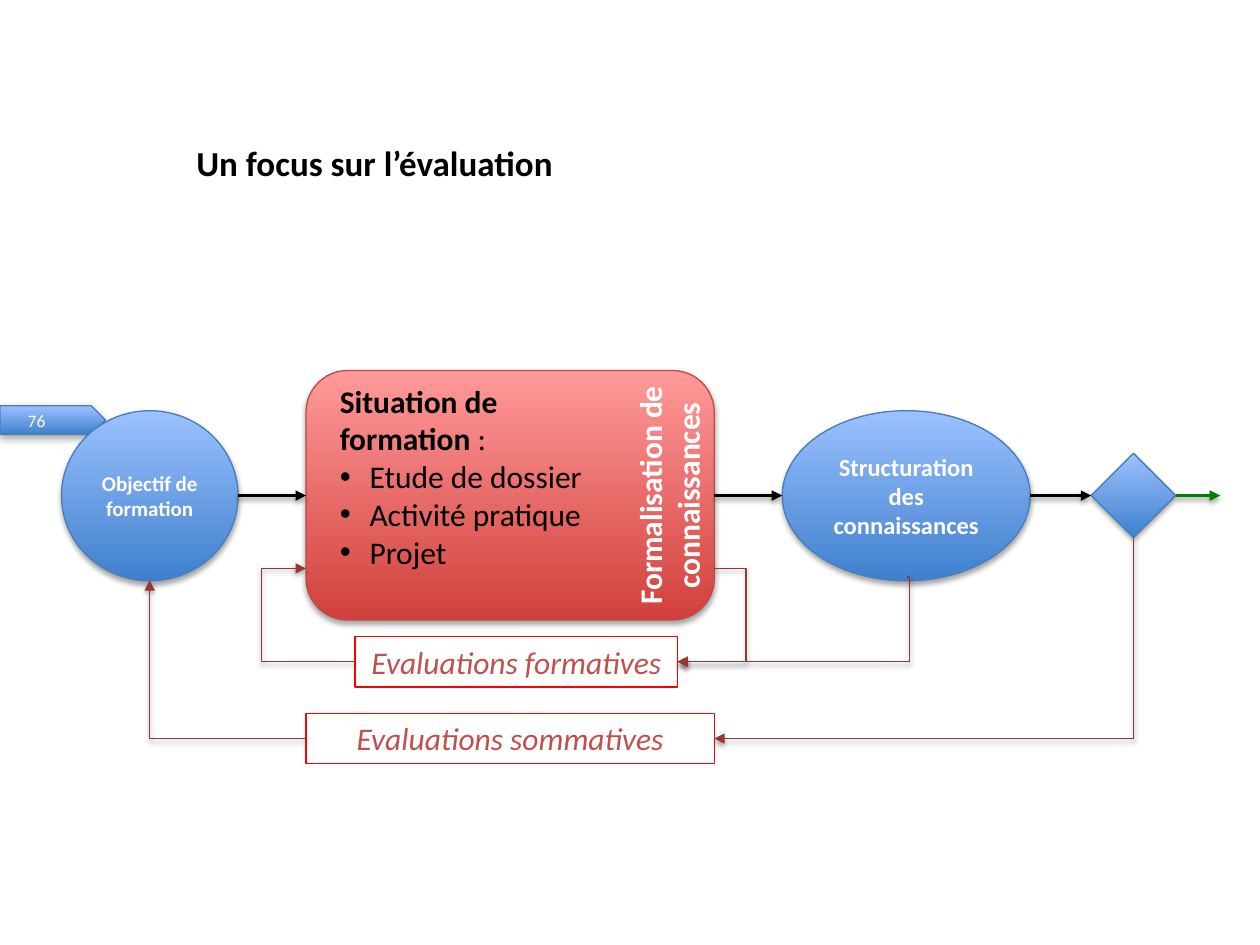
from lxml import etree
from pptx import Presentation
from pptx.dml.color import RGBColor
from pptx.enum.shapes import MSO_CONNECTOR as LINE, MSO_SHAPE as SHAPE
from pptx.enum.text import MSO_ANCHOR as ANCHOR, PP_ALIGN as ALIGN
from pptx.oxml.ns import qn
from pptx.util import Cm, Pt

COLORS = {
    "blue": "3F80CD", "light_blue": "9BC1FF", "blue_edge": "4A7EBB",
    "red": "D1403C", "light_red": "FF9A99", "red_edge": "BE4B48",
    "box_edge": "FF0000", "box_text": "C0504D", "feedback": "953735",
    "black": "000000", "green": "008000", "white": "FFFFFF",
}
RGB = {name: RGBColor.from_string(value) for name, value in COLORS.items()}


def write(p, text, size=18, color="black", bold=False, italic=False, align=None):
    """Append a formatted run to paragraph p."""
    if align is not None:
        p.alignment = align
    r = p.add_run()
    r.text = text
    r.font.name = "Calibri"
    r.font.size = Pt(size)
    r.font.bold = bold
    r.font.italic = italic
    r.font.color.rgb = RGB[color]


def add_shadow(sp, blur=3.1, dist=1.8, alpha=35):
    effects = etree.SubElement(sp._element.spPr, qn("a:effectLst"))
    shadow = etree.SubElement(
        effects, qn("a:outerShdw"), blurRad=str(Pt(blur)), dist=str(Pt(dist)),
        dir="5400000", rotWithShape="0")
    black = etree.SubElement(shadow, qn("a:srgbClr"), val=COLORS["black"])
    etree.SubElement(black, qn("a:alpha"), val=str(alpha * 1000))


prs = Presentation()
prs.slide_width, prs.slide_height = Cm(25.4), Cm(19.05)
shapes = prs.slides.add_slide(prs.slide_layouts[6]).shapes

# Process steps: preset, box, palette, text, text size, shadow blur
steps = [
    (SHAPE.PENTAGON, (0, 8.18, 2.13, 0.58), "blue", "76", 10, 5),
    (SHAPE.OVAL, (1.24, 8.28, 3.56, 3.43), "blue", "Objectif de formation", 12, 3.1),
    (SHAPE.ROUNDED_RECTANGLE, (6.17, 7.47, 8.23, 5.03), "red", "", 18, 3.1),
    (SHAPE.OVAL, (15.77, 8.28, 5, 3.43), "blue",
     "Structuration des connaissances", 14, 3.1),
    (SHAPE.DIAMOND, (22, 9.14, 1.7, 1.7), "blue", "", 14, 3.1),
]
for preset, box, palette, text, size, blur in steps:
    sp = shapes.add_shape(preset, *map(Cm, box))
    sp.fill.gradient()
    sp.fill.gradient_angle = 90
    for stop, color in zip(sp.fill.gradient_stops, (palette, "light_" + palette)):
        stop.color.rgb = RGB[color]
    sp.line.color.rgb = RGB[palette + "_edge"]
    sp.line.width = Pt(0.75)
    add_shadow(sp, blur)
    tf = sp.text_frame
    tf.vertical_anchor = ANCHOR.MIDDLE
    if preset == SHAPE.PENTAGON:
        tf.margin_left = Cm(0.56)
        tf.margin_top = tf.margin_bottom = 0
        write(tf.paragraphs[0], text, size, "white", align=ALIGN.LEFT)
    elif text:
        write(tf.paragraphs[0], text, size, "white", bold=True, align=ALIGN.CENTER)

# Evaluation boxes
for text, box in [("Evaluations formatives", (7.16, 12.83, 6.5, 1.02)),
                  ("Evaluations sommatives", (6.17, 14.38, 8.23, 1.02))]:
    sp = shapes.add_shape(SHAPE.RECTANGLE, *map(Cm, box))
    sp.shadow.inherit = False
    sp.fill.background()
    sp.line.color.rgb = RGB["box_edge"]
    sp.line.width = Pt(0.75)
    sp.text_frame.vertical_anchor = ANCHOR.TOP
    write(sp.text_frame.paragraphs[0], text, color="box_text", italic=True,
          align=ALIGN.CENTER)

# Arrows: start, end, colour, width, geometry, x of the middle leg, arrow end
flow_y, loop_y, formative_y, summative_y = 9.99, 11.46, 13.34, 14.89
STRAIGHT, CORNER, DETOUR = "line", "bentConnector2", "bentConnector3"
arrows = [
    ((7.16, formative_y), (6.17, loop_y), "feedback", 0.75, DETOUR, 5.28, "tailEnd"),
    ((14.4, loop_y), (13.66, formative_y), "feedback", 0.75, DETOUR, 15.04, "tailEnd"),
    ((18.29, 11.63), (13.66, formative_y), "feedback", 0.75, DETOUR, 18.34, "tailEnd"),
    ((14.4, summative_y), (22.85, 10.84), "feedback", 0.75, CORNER, None, "headEnd"),
    ((6.17, summative_y), (3.02, 11.7), "feedback", 0.75, CORNER, None, "tailEnd"),
    ((4.8, flow_y), (6.17, flow_y), "black", 2, STRAIGHT, None, "tailEnd"),
    ((14.4, flow_y), (15.77, flow_y), "black", 2, STRAIGHT, None, "tailEnd"),
    ((20.77, flow_y), (22, flow_y), "black", 2, STRAIGHT, None, "tailEnd"),
    ((23.7, flow_y), (24.6, flow_y), "green", 2, STRAIGHT, None, "tailEnd"),
]
for start, end, color, width, geometry, via_x, arrow_end in arrows:
    kind = LINE.STRAIGHT if geometry == STRAIGHT else LINE.ELBOW
    line = shapes.add_connector(kind, *map(Cm, start + end))
    line.line.color.rgb = RGB[color]
    line.line.width = Pt(width)
    etree.SubElement(line.line._get_or_add_ln(), qn("a:" + arrow_end), type="triangle")
    geom = line._element.spPr.find(qn("a:prstGeom"))
    geom.set("prst", geometry)
    if via_x is not None:
        ratio = (via_x - start[0]) / (end[0] - start[0])
        etree.SubElement(geom.find(qn("a:avLst")), qn("a:gd"), name="adj1",
                         fmla=f"val {round(ratio * 100000)}")
    add_shadow(line, dist=1.6, alpha=38)

# Text boxes
frames = []
for box, rotation in [((6.6, 7.57, 5.74, 4.88), 0),
                      ((10.62, 9.09, 5.74, 1.8), 270),
                      ((3.71, 2.72, 18.8, 1.12), 0)]:
    sp = shapes.add_textbox(*map(Cm, box))
    sp.rotation = rotation
    sp.text_frame.word_wrap = True
    frames.append(sp.text_frame)
situation, formalisation, title = frames

write(situation.paragraphs[0], "Situation de formation ", bold=True)
write(situation.paragraphs[0], ":")
for text in ("Etude de dossier", "Activité pratique", "Projet"):
    p = situation.add_paragraph()
    pPr = p._p.get_or_add_pPr()
    pPr.set("marL", str(Cm(0.6)))
    pPr.set("indent", str(Cm(-0.6)))
    etree.SubElement(pPr, qn("a:buFont"), typeface="Arial")
    etree.SubElement(pPr, qn("a:buChar"), char="•")
    write(p, text)
write(formalisation.paragraphs[0], "Formalisation de connaissances", color="white",
      bold=True, align=ALIGN.CENTER)
write(title.paragraphs[0], "Un focus sur l’évaluation", 20, bold=True)

prs.save("out.pptx")
